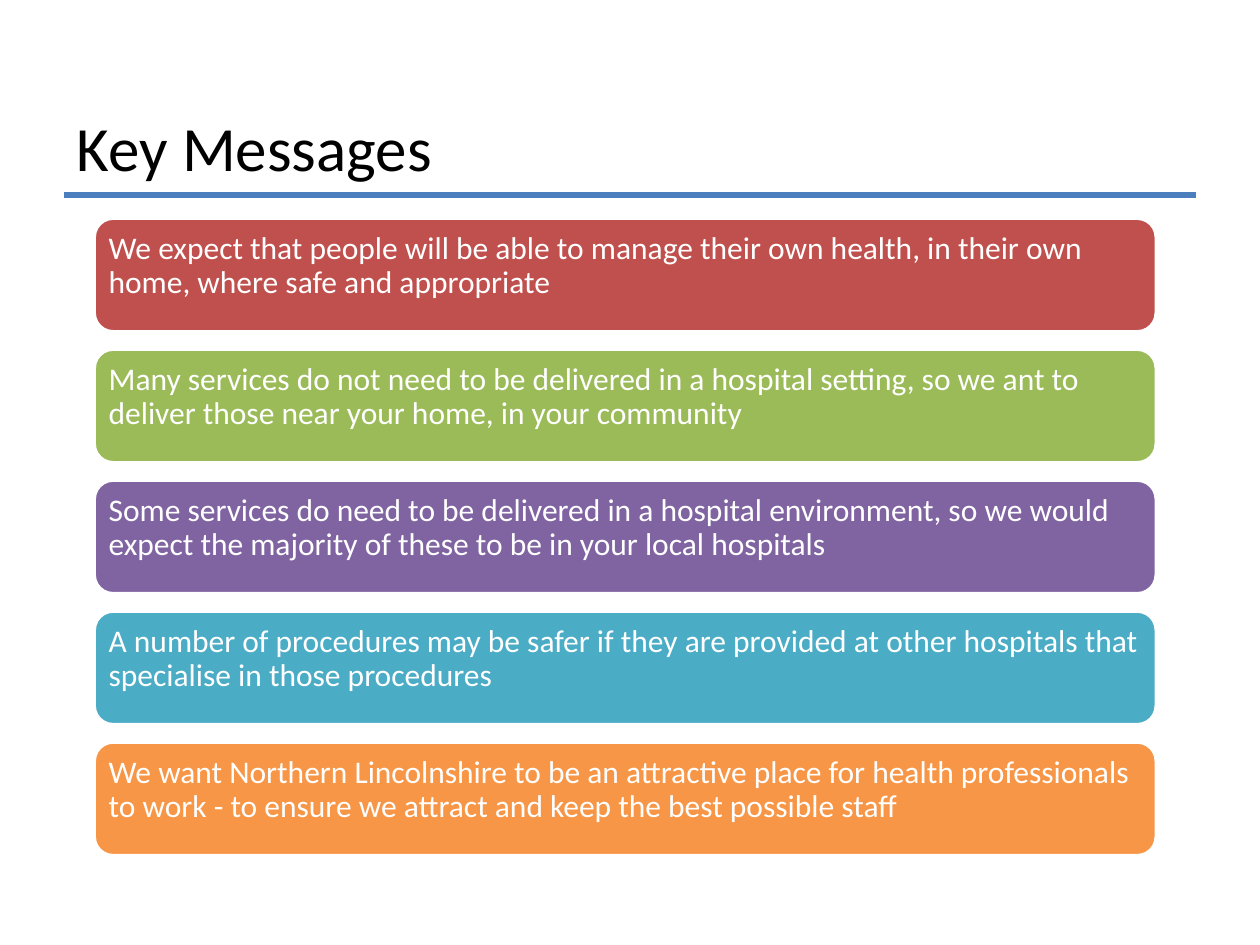
from dataclasses import dataclass

from lxml.etree import SubElement
from pptx import Presentation
from pptx.dml.color import RGBColor as RGB
from pptx.enum.shapes import MSO_CONNECTOR as CONNECTOR, MSO_SHAPE as SHAPE
from pptx.enum.text import MSO_ANCHOR as ANCHOR, PP_ALIGN as ALIGN
from pptx.oxml.ns import qn
from pptx.util import Cm, Pt


@dataclass(frozen=True)
class Theme:
    font: str = "Calibri"
    title_size: float = 36
    message_size: float = 18
    title_color: str = "000000"
    rule_color: str = "4B7EBC"
    white: str = "FFFFFF"
    message_fills: tuple = ("C0504D", "9BBB59", "8064A2", "4BACC6", "F79646")


THEME = Theme()

MESSAGES = (
    "We expect that people will be able to manage their own health, in their own "
    "home, where safe and appropriate",
    "Many services do not need to be delivered in a hospital setting, so we ant to "
    "deliver those near your home, in your community",
    "Some services do need to be delivered in a hospital environment, so we would "
    "expect the majority of these to be in your local hospitals",
    "A number of procedures may be safer if they are provided at other hospitals "
    "that specialise in those procedures",
    "We want Northern Lincolnshire to be an attractive place for health "
    "professionals to work - to ensure we attract and keep the best possible staff",
)

# Message stack
FIRST_TOP, PITCH = 4.4, 2.64
INSET = Cm(0.18)


def set_all(target, formats):
    for name, value in formats.items():
        setattr(target, name, value)


def write(frame, words, size, color, frame_formats, line_spacing=1.0):
    set_all(frame, {"word_wrap": True, **frame_formats})
    paragraph = frame.paragraphs[0]
    set_all(paragraph, {"text": words, "alignment": ALIGN.LEFT,
                        "line_spacing": line_spacing})
    set_all(paragraph.font, {"name": THEME.font, "size": Pt(size)})
    paragraph.font.color.rgb = RGB.from_string(color)


def add_title(slide, words):
    title = slide.shapes.add_textbox(Cm(1.3), Cm(2.13), Cm(22.86), Cm(1.63))
    write(title.text_frame, words, THEME.title_size, THEME.title_color,
          {"vertical_anchor": ANCHOR.MIDDLE})


def add_rule(slide):
    rule = slide.shapes.add_connector(
        CONNECTOR.STRAIGHT, Cm(1.3), Cm(3.93), Cm(24.1), Cm(3.93))
    rule.line.color.rgb = RGB.from_string(THEME.rule_color)
    rule.line.width = Pt(3)
    SubElement(rule._element.spPr, qn("a:effectLst"))


def add_message(slide, top, words, fill):
    message = slide.shapes.add_shape(
        SHAPE.ROUNDED_RECTANGLE, Cm(1.9), Cm(top), Cm(21.41), Cm(2.29))
    message.shadow.inherit = False
    message.fill.solid()
    message.fill.fore_color.rgb = RGB.from_string(fill)
    message.line.color.rgb = RGB.from_string(THEME.white)
    message.line.width = Pt(2)
    write(message.text_frame, words, THEME.message_size, THEME.white,
          {"vertical_anchor": ANCHOR.TOP, "margin_left": INSET,
           "margin_right": INSET, "margin_top": INSET, "margin_bottom": INSET},
          line_spacing=0.9)


def main():
    deck = Presentation()
    set_all(deck, {"slide_width": Cm(25.4), "slide_height": Cm(19.05)})
    slide = deck.slides.add_slide(deck.slide_layouts[6])

    # Heading
    add_rule(slide)
    add_title(slide, "Key Messages")

    # One coloured bar per message
    for row, (words, fill) in enumerate(zip(MESSAGES, THEME.message_fills)):
        add_message(slide, FIRST_TOP + row * PITCH, words, fill)

    deck.save("out.pptx")


if __name__ == "__main__":
    main()
